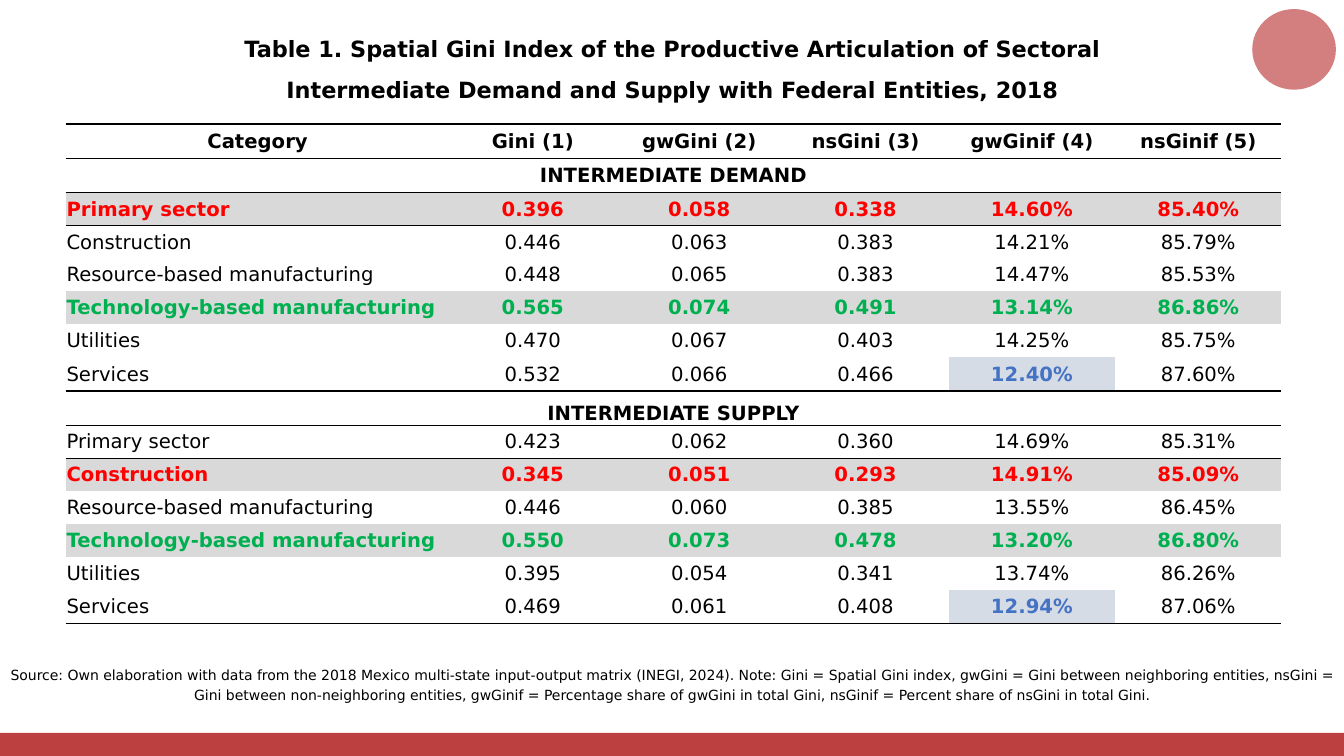
"""Build a slide with a table of spatial Gini indices by sector."""
import lxml.etree
import pptx
import pptx.dml.color
import pptx.enum.shapes
import pptx.enum.text
import pptx.oxml.ns
import pptx.util

FONT = "DejaVu Sans"
BLACK, RED, GREEN, BLUE = "000000", "FF0000", "00B050", "4472C4"
GREY, PALE_BLUE, MAROON = "D9D9D9", "D6DCE5", "A80000"
CENTER = pptx.enum.text.PP_ALIGN.CENTER
LEFT = pptx.enum.text.PP_ALIGN.LEFT
MIDDLE = pptx.enum.text.MSO_ANCHOR.MIDDLE
inches = pptx.util.Inches
qn = pptx.oxml.ns.qn


def color(hex_string):
    return pptx.dml.color.RGBColor.from_string(hex_string)


def write(paragraph, text, size, bold=False, ink=BLACK, align=CENTER):
    paragraph.alignment = align
    run = paragraph.add_run()
    run.text = text
    run.font.name = FONT
    run.font.size = pptx.util.Pt(size)
    run.font.bold = bold
    run.font.color.rgb = color(ink)


presentation = pptx.Presentation()
presentation.slide_width = inches(13.33)
presentation.slide_height = inches(7.5)
slide = presentation.slides.add_slide(presentation.slide_layouts[5])

SHAPES = pptx.enum.shapes.MSO_SHAPE
decorations = [
    (SHAPES.OVAL, (12.42, 0.09, 0.83, 0.8), 50),
    (SHAPES.RECTANGLE, (0, 7.27, 13.33, 0.24), 75),
]
for kind, box, opacity in decorations:
    shape = slide.shapes.add_shape(kind, *map(inches, box))
    shape.shadow.inherit = False
    shape.fill.solid()
    shape.fill.fore_color.rgb = color(MAROON)
    shape.line.fill.background()
    tint = shape.element.spPr.find(".//" + qn("a:srgbClr"))
    lxml.etree.SubElement(tint, qn("a:alpha"), val=str(opacity * 1000))

title = slide.shapes.title
source_note = slide.shapes.add_textbox(0, 0, 0, 0)
text_blocks = [
    (title, (1.48, 0.17, 10.38, 0.85), 16, True, 1.5,
     "Table 1. Spatial Gini Index of the Productive Articulation of Sectoral "
     "Intermediate Demand and Supply with Federal Entities, 2018"),
    (source_note, (0, 6.54, 13.33, 0.47), 10, False, 1.15,
     "Source: Own elaboration with data from the 2018 Mexico multi-state input-output matrix "
     "(INEGI, 2024). Note: Gini = Spatial Gini index, gwGini = Gini between neighboring entities, "
     "nsGini = Gini between non-neighboring entities, gwGinif = Percentage share of gwGini in "
     "total Gini, nsGinif = Percent share of nsGini in total Gini."),
]
for shape, box, size, bold, spacing, text in text_blocks:
    shape.left, shape.top, shape.width, shape.height = map(inches, box)
    frame = shape.text_frame
    frame.word_wrap = True
    frame.auto_size = pptx.enum.text.MSO_AUTO_SIZE.NONE
    frame.vertical_anchor = pptx.enum.text.MSO_ANCHOR.TOP
    paragraph = frame.paragraphs[0]
    paragraph.line_spacing = spacing
    paragraph.space_before = pptx.util.Pt(0)
    paragraph.space_after = pptx.util.Pt(8)
    write(paragraph, text, size, bold)

rows = [
    ("Category", "Gini (1)", "gwGini (2)", "nsGini (3)", "gwGinif (4)", "nsGinif (5)"),
    ("INTERMEDIATE DEMAND",),
    ("Primary sector", "0.396", "0.058", "0.338", "14.60%", "85.40%"),
    ("Construction", "0.446", "0.063", "0.383", "14.21%", "85.79%"),
    ("Resource-based manufacturing", "0.448", "0.065", "0.383", "14.47%", "85.53%"),
    ("Technology-based manufacturing", "0.565", "0.074", "0.491", "13.14%", "86.86%"),
    ("Utilities", "0.470", "0.067", "0.403", "14.25%", "85.75%"),
    ("Services", "0.532", "0.066", "0.466", "12.40%", "87.60%"),
    ("INTERMEDIATE SUPPLY",),
    ("Primary sector", "0.423", "0.062", "0.360", "14.69%", "85.31%"),
    ("Construction", "0.345", "0.051", "0.293", "14.91%", "85.09%"),
    ("Resource-based manufacturing", "0.446", "0.060", "0.385", "13.55%", "86.45%"),
    ("Technology-based manufacturing", "0.550", "0.073", "0.478", "13.20%", "86.80%"),
    ("Utilities", "0.395", "0.054", "0.341", "13.74%", "86.26%"),
    ("Services", "0.469", "0.061", "0.408", "12.94%", "87.06%"),
]
heading_rows = {0, 1, 8}
lowest_gini = {2, 10}
highest_gini = {5, 12}
lowest_share = {(7, 4), (14, 4)}
ruled_edges = {0, 1, 2, 8, 9, 15}
tall_rows = {0, 1, 7, 8, 14}
TABLE_HEIGHT, TALL = 4.96, 0.34
NORMAL = (TABLE_HEIGHT - TALL * len(tall_rows)) / (len(rows) - len(tall_rows))

table_shape = slide.shapes.add_table(
    len(rows), 6, inches(0.65), inches(1.23), inches(12.04), inches(TABLE_HEIGHT))
table = table_shape.table
table.first_row = table.horz_banding = False
style = table_shape.element.find(".//" + qn("a:tableStyleId"))
style.text = "{2D5ABB26-0587-4C30-8999-92F81FD0307C}"
for index, column in enumerate(table.columns):
    column.width = inches(1.65 if index else 3.81)

for r, values in enumerate(rows):
    table.rows[r].height = inches(TALL if r in tall_rows else NORMAL)
    if len(values) == 1:
        table.cell(r, 0).merge(table.cell(r, 5))
    for c in range(6):
        cell = table.cell(r, c)
        cell.margin_left = cell.margin_right = cell.margin_top = inches(0.01)
        cell.margin_bottom = 0
        cell.vertical_anchor = MIDDLE

        properties = cell._tc.get_or_add_tcPr()
        for side, edge in (("a:lnT", r), ("a:lnB", r + 1)):
            if edge in ruled_edges:
                line = lxml.etree.SubElement(properties, qn(side), w=str(pptx.util.Pt(1)))
                solid = lxml.etree.SubElement(line, qn("a:solidFill"))
                lxml.etree.SubElement(solid, qn("a:srgbClr"), val=BLACK)

        ink, background = BLACK, None
        if r in lowest_gini:
            ink, background = RED, GREY
        elif r in highest_gini:
            ink, background = GREEN, GREY
        elif (r, c) in lowest_share:
            ink, background = BLUE, PALE_BLUE
        if background:
            cell.fill.solid()
            cell.fill.fore_color.rgb = color(background)
        else:
            cell.fill.background()

        if c < len(values):
            bold = r in heading_rows or background is not None
            align = LEFT if c == 0 and r not in heading_rows else CENTER
            write(cell.text_frame.paragraphs[0], values[c], 14, bold, ink, align)

table.cell(8, 0).vertical_anchor = pptx.enum.text.MSO_ANCHOR.BOTTOM

presentation.save("out.pptx")
